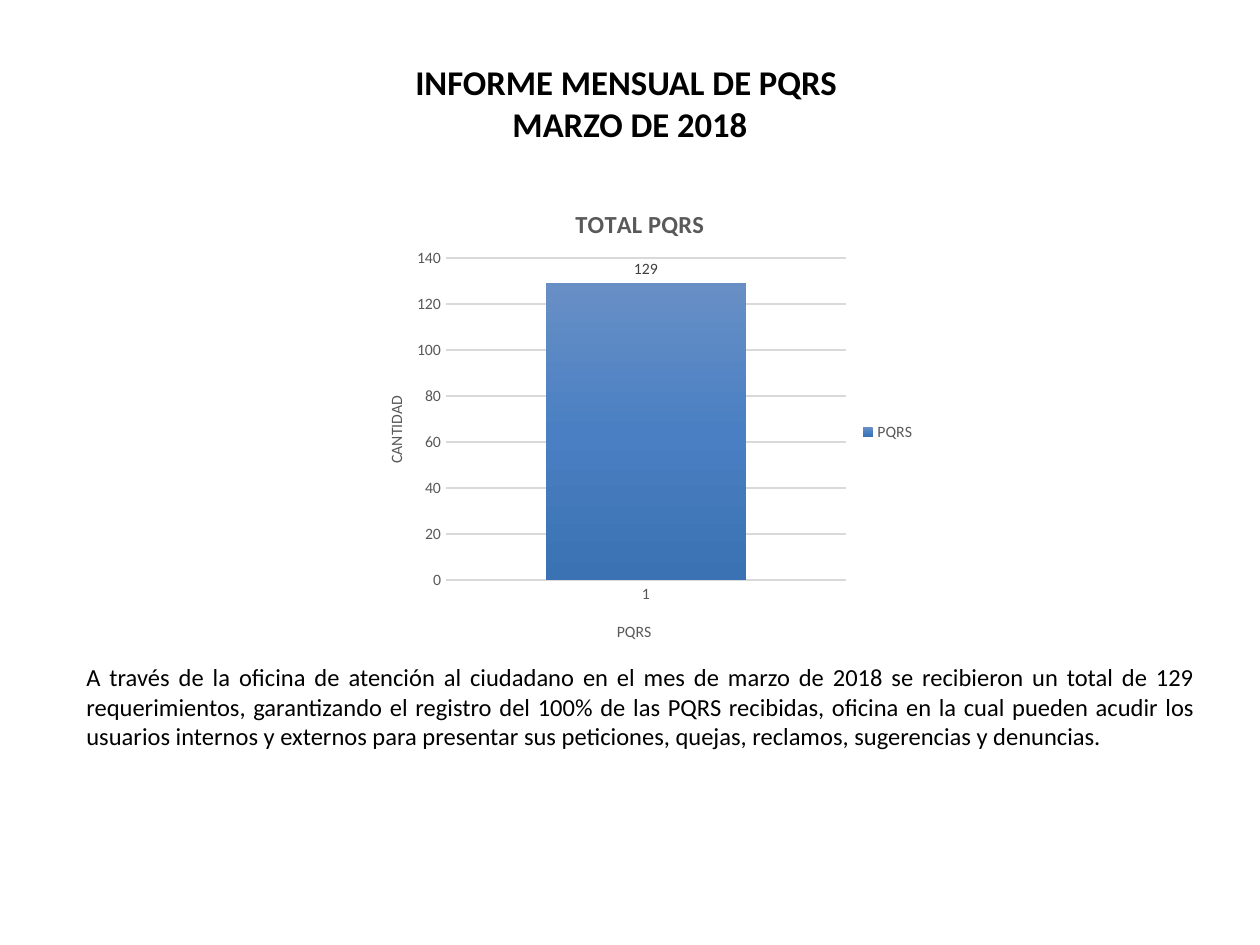
"""Build the monthly PQRS report slide for March 2018."""
import dataclasses

import lxml.etree
import pptx
import pptx.chart.data
import pptx.dml.color
import pptx.enum.chart
import pptx.enum.text
import pptx.oxml
import pptx.oxml.ns
import pptx.util

PIXELS_PER_INCH = 126
SCALE = 914400 / PIXELS_PER_INCH
FONT = "Calibri"
BLACK = pptx.dml.color.RGBColor(0x00, 0x00, 0x00)
GRAY = pptx.dml.color.RGBColor(0x59, 0x59, 0x59)
LABEL_GRAY = pptx.dml.color.RGBColor(0x40, 0x40, 0x40)
GRID_GRAY = pptx.dml.color.RGBColor(0xD9, 0xD9, 0xD9)
GRADIENT = {
    0: pptx.dml.color.RGBColor(0x68, 0x8F, 0xC5),
    50: pptx.dml.color.RGBColor(0x4A, 0x80, 0xC3),
    100: pptx.dml.color.RGBColor(0x3B, 0x72, 0xB3),
}
HEADING = "INFORME MENSUAL DE PQRS \vMARZO DE 2018"
SUMMARY = (
    "A través de la oficina de atención al ciudadano en el mes de marzo de 2018 "
    "se recibieron un total de 129 requerimientos, garantizando el registro del "
    "100% de las PQRS recibidas, oficina en la cual pueden acudir los usuarios "
    "internos y externos para presentar sus peticiones, quejas, reclamos, "
    "sugerencias y denuncias."
)


@dataclasses.dataclass(frozen=True)
class Box:
    left: int
    top: int
    width: int = 0
    height: int = 0

    def emu(self) -> list[int]:
        return [round(value * SCALE) for value in dataclasses.astuple(self)]


HEADING_BOX = Box(63, 55, 1134, 97)
SUMMARY_BOX = Box(74, 656, 1134, 101)
CHART_BOX = Box(355, 179, 572, 501)
PLOT_BOX = Box(446, 258, 400, 322)


def set_font(font, size: float, color, bold: bool = False) -> None:
    font.name = FONT
    font.size = pptx.util.Pt(size)
    font.bold = bold
    font.color.rgb = color


def write_text(text_frame, text: str, *, size: float, color=BLACK, bold: bool = False,
               alignment=pptx.enum.text.PP_ALIGN.CENTER) -> None:
    text_frame.text = text.replace("\v", "\n") if "\v" not in text else ""
    paragraph = text_frame.paragraphs[0]
    paragraph.text = text
    paragraph.alignment = alignment
    for run in paragraph.runs:
        set_font(run.font, size, color, bold)


def add_text_box(slide, box: Box, text: str, **text_format) -> None:
    text_frame = slide.shapes.add_textbox(*box.emu()).text_frame
    text_frame.word_wrap = True
    write_text(text_frame, text, **text_format)


def place(element, box: Box) -> None:
    qn = pptx.oxml.ns.qn
    for old_layout in element.findall(qn("c:layout")):
        element.remove(old_layout)
    layout = lxml.etree.Element(qn("c:layout"))
    manual = lxml.etree.SubElement(layout, qn("c:manualLayout"))
    values = {}
    if box.width:
        values["layoutTarget"] = "inner"
    values.update(xMode="edge", yMode="edge")
    values["x"] = f"{(box.left - CHART_BOX.left) / CHART_BOX.width:.4f}"
    values["y"] = f"{(box.top - CHART_BOX.top) / CHART_BOX.height:.4f}"
    if box.width:
        values["w"] = f"{box.width / CHART_BOX.width:.4f}"
        values["h"] = f"{box.height / CHART_BOX.height:.4f}"
    for name, value in values.items():
        lxml.etree.SubElement(manual, qn(f"c:{name}")).set("val", value)
    overlay = element.find(qn("c:overlay"))
    if overlay is None:
        element.insert(0, layout)
    else:
        overlay.addprevious(layout)


def add_title(title, text: str, box: Box, **text_format) -> None:
    write_text(title.text_frame, text, color=GRAY, **text_format)
    place(title._element, box)


def fill_gradient(fill) -> None:
    fill.gradient()
    fill.gradient_angle = 270
    stops = fill._fill._gradFill.find(pptx.oxml.ns.qn("a:gsLst"))
    for stop in list(stops):
        stops.remove(stop)
    for percent, color in GRADIENT.items():
        stop = lxml.etree.SubElement(
            stops, pptx.oxml.ns.qn("a:gs"), pos=str(percent * 1000))
        lxml.etree.SubElement(stop, pptx.oxml.ns.qn("a:srgbClr"), val=str(color))


def style_axes(chart) -> None:
    for axis in (chart.category_axis, chart.value_axis):
        axis.major_tick_mark = pptx.enum.chart.XL_TICK_MARK.NONE
        axis.minor_tick_mark = pptx.enum.chart.XL_TICK_MARK.NONE
        set_font(axis.tick_labels.font, 9, GRAY)
    category_line = chart.category_axis.format.line
    category_line.color.rgb = GRID_GRAY
    category_line.width = pptx.util.Pt(1)
    value_axis = chart.value_axis
    value_axis.minimum_scale, value_axis.maximum_scale = 0, 140
    value_axis.major_unit = 20
    value_axis.format.line.fill.background()
    grid_line = value_axis.major_gridlines.format.line
    grid_line.color.rgb = GRID_GRAY
    grid_line.width = pptx.util.Pt(0.75)


def add_total_chart(slide) -> None:
    data = pptx.chart.data.CategoryChartData()
    data.categories = ["1"]
    data.add_series("PQRS", [129])
    chart = slide.shapes.add_chart(
        pptx.enum.chart.XL_CHART_TYPE.COLUMN_CLUSTERED, *CHART_BOX.emu(), data).chart
    set_font(chart.font, 10, BLACK)
    style_axes(chart)
    add_title(chart.chart_title, "TOTAL PQRS", Box(571, 203), size=14, bold=True)
    add_title(chart.category_axis.axis_title, "PQRS", Box(614, 618), size=9)
    add_title(chart.value_axis.axis_title, "CANTIDAD", Box(383, 393), size=9)

    plot = chart.plots[0]
    plot.vary_by_categories = False
    plot.gap_width = 100
    plot.overlap = -24
    fill_gradient(plot.series[0].format.fill)
    labels = plot.series[0].data_labels
    labels.show_value = True
    labels.position = pptx.enum.chart.XL_LABEL_POSITION.OUTSIDE_END
    set_font(labels.font, 9, LABEL_GRAY)

    chart.has_legend = True
    chart.legend.position = pptx.enum.chart.XL_LEGEND_POSITION.RIGHT
    chart.legend.include_in_layout = False
    set_font(chart.legend.font, 9, GRAY)
    place(chart.legend._element, Box(858, 418))
    place(chart._chartSpace.chart.plotArea, PLOT_BOX)


def main() -> None:
    presentation = pptx.Presentation()
    presentation.slide_width = pptx.util.Inches(10)
    presentation.slide_height = pptx.util.Inches(7.5)
    slide = presentation.slides.add_slide(presentation.slide_layouts[6])
    add_text_box(slide, HEADING_BOX, HEADING, size=19.8, bold=True)
    add_text_box(slide, SUMMARY_BOX, SUMMARY, size=14,
                 alignment=pptx.enum.text.PP_ALIGN.JUSTIFY)
    add_total_chart(slide)
    presentation.save("out.pptx")


if __name__ == "__main__":
    main()
